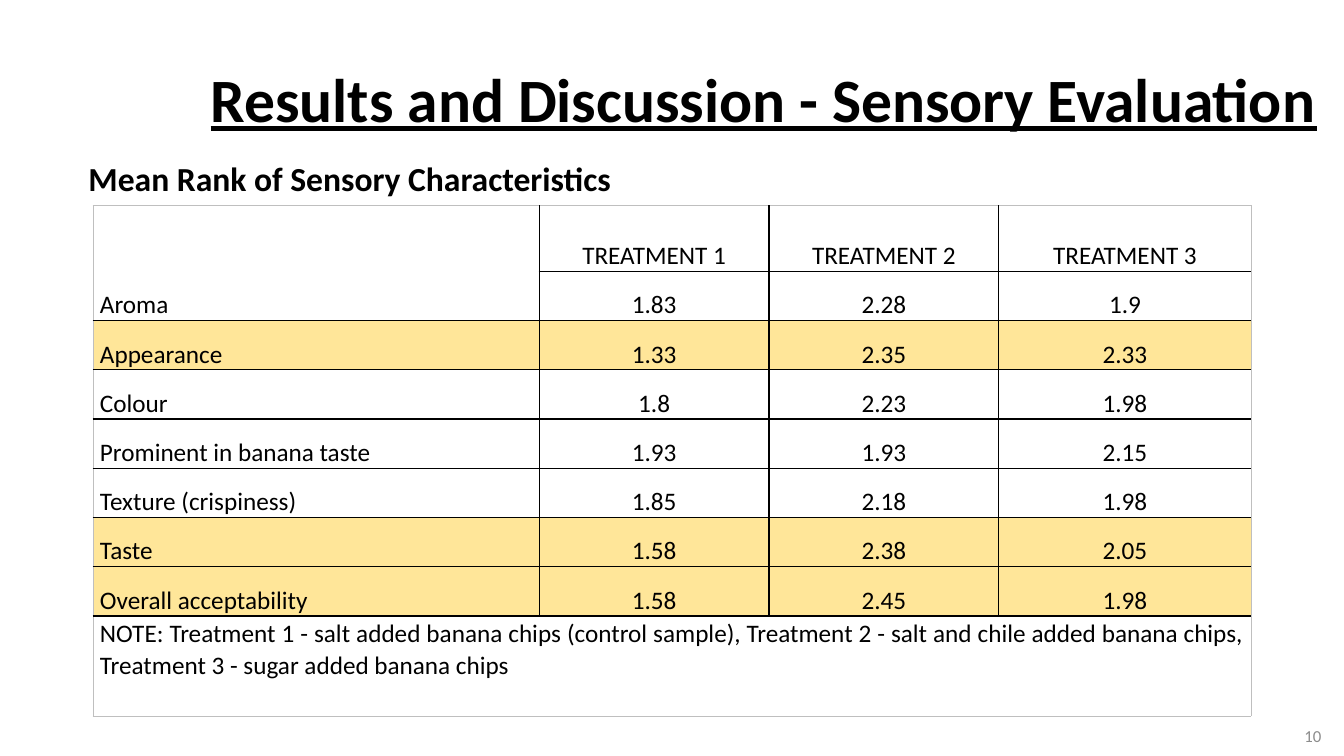
from dataclasses import dataclass
from typing import Optional

from lxml import etree
from pptx import Presentation
from pptx import util as u
from pptx.dml.color import RGBColor
from pptx.enum import shapes, text
from pptx.oxml import ns


@dataclass(frozen=True)
class Theme:
    font: str = "Calibri"
    ink: str = "000000"
    paper: str = "FFFFFF"
    highlight: str = "FFE699"
    frame: str = "BFBFBF"
    muted: str = "8C8C8C"
    title_size: int = 44
    heading_size: int = 24
    table_size: int = 18
    number_size: int = 12


@dataclass(frozen=True)
class Label:
    wording: str
    left: float
    top: float
    width: float
    height: float
    size: int
    color: str
    align: text.PP_ALIGN = text.PP_ALIGN.LEFT
    anchor: text.MSO_ANCHOR = text.MSO_ANCHOR.MIDDLE
    line_spacing: float = 1.0
    space_after: int = 0
    bold: bool = False
    underline: bool = False
    fill: Optional[str] = None


@dataclass(frozen=True)
class Rating:
    characteristic: str
    ranks: tuple[str, str, str]
    highlighted: bool = False


THEME = Theme()
LINE_SPACING = 1.07
TREATMENTS = ("TREATMENT 1", "TREATMENT 2", "TREATMENT 3")
RATINGS = (
    Rating("Aroma", ("1.83", "2.28", "1.9")),
    Rating("Appearance", ("1.33", "2.35", "2.33"), True),
    Rating("Colour", ("1.8", "2.23", "1.98")),
    Rating("Prominent in banana taste", ("1.93", "1.93", "2.15")),
    Rating("Texture (crispiness)", ("1.85", "2.18", "1.98")),
    Rating("Taste", ("1.58", "2.38", "2.05"), True),
    Rating("Overall acceptability", ("1.58", "2.45", "1.98"), True),
)
NOTE = ("NOTE: Treatment 1 - salt added banana chips (control sample), "
        "Treatment 2 - salt and chile added banana chips, "
        "Treatment 3 - sugar added banana chips")
COLUMN_WIDTHS = (11.25, 5.79, 5.79, 6.36)
ROW_HEIGHTS = (1.66, *[1.24] * len(RATINGS), 2.52)
NOTE_ROW = len(ROW_HEIGHTS) - 1
LAST_COLUMN = len(COLUMN_WIDTHS) - 1

PAGE_NUMBER = Label("10", 25.93, 18.03, 7.62, 1.02, THEME.number_size, THEME.muted,
                    align=text.PP_ALIGN.RIGHT)
HEADING = Label("Mean Rank of Sensory Characteristics", 1.98, 3.78, 14, 1.27,
                THEME.heading_size, THEME.ink, anchor=text.MSO_ANCHOR.TOP,
                line_spacing=LINE_SPACING, space_after=8, bold=True, fill=THEME.paper)
TITLE = Label("Results and Discussion - Sensory Evaluation", 4.65, 0.74, 29.21, 3.68,
              THEME.title_size, THEME.ink, align=text.PP_ALIGN.CENTER,
              line_spacing=0.9, bold=True, underline=True)


def add_run(paragraph, wording: str, size: int, color: str):
    run = paragraph.add_run()
    run.text = wording
    run.font.name = THEME.font
    run.font.size = u.Pt(size)
    run.font.color.rgb = RGBColor.from_string(color)
    return run


def add_label(slide, label: Label) -> None:
    area = [u.Cm(n) for n in (label.left, label.top, label.width, label.height)]
    if label.fill:
        box = slide.shapes.add_shape(shapes.MSO_SHAPE.RECTANGLE, *area)
        box.shadow.inherit = False
        box.fill.solid()
        box.fill.fore_color.rgb = RGBColor.from_string(label.fill)
        box.line.fill.background()
    else:
        box = slide.shapes.add_textbox(*area)
    frame = box.text_frame
    frame.word_wrap = True
    frame.vertical_anchor = label.anchor
    paragraph = frame.paragraphs[0]
    paragraph.alignment = label.align
    paragraph.line_spacing = label.line_spacing
    paragraph.space_after = u.Pt(label.space_after)
    run = add_run(paragraph, label.wording, label.size, label.color)
    run.font.bold = label.bold
    run.font.underline = label.underline


def set_borders(cell, row: int, column: int) -> None:
    """Rule the inner edges in ink and the table's outer edges in a thin grey."""
    outer_edges = {
        "lnL": column == 0 or row == NOTE_ROW,
        "lnR": column == LAST_COLUMN or row == NOTE_ROW,
        "lnT": row == 0,
        "lnB": row == NOTE_ROW,
    }
    properties = cell._tc.get_or_add_tcPr()
    for edge, outer in outer_edges.items():
        width = u.Pt(0.5 if outer else 1)
        line = etree.SubElement(properties, ns.qn(f"a:{edge}"), w=str(int(width)))
        fill = etree.SubElement(line, ns.qn("a:solidFill"))
        etree.SubElement(fill, ns.qn("a:srgbClr"), val=THEME.frame if outer else THEME.ink)


def write_cell(cell, wording: str, align: text.PP_ALIGN,
               anchor: text.MSO_ANCHOR = text.MSO_ANCHOR.BOTTOM) -> None:
    cell.vertical_anchor = anchor
    cell.margin_left = cell.margin_right = u.Cm(0.18)
    cell.margin_top = cell.margin_bottom = 0
    paragraph = cell.text_frame.paragraphs[0]
    paragraph.alignment = align
    paragraph.line_spacing = LINE_SPACING
    add_run(paragraph, wording, THEME.table_size, THEME.ink)


def add_rank_table(slide) -> None:
    table = slide.shapes.add_table(
        len(ROW_HEIGHTS), len(COLUMN_WIDTHS), u.Cm(2.34), u.Cm(5.18),
        u.Cm(sum(COLUMN_WIDTHS)), u.Cm(sum(ROW_HEIGHTS))).table
    table.first_row = table.horz_banding = False
    for column, width in zip(table.columns, COLUMN_WIDTHS):
        column.width = u.Cm(width)
    for row, height in zip(table.rows, ROW_HEIGHTS):
        row.height = u.Cm(height)

    highlighted_rows = {i for i, rating in enumerate(RATINGS, 1) if rating.highlighted}
    for row in range(len(ROW_HEIGHTS)):
        color = THEME.highlight if row in highlighted_rows else THEME.paper
        for column in range(len(COLUMN_WIDTHS)):
            cell = table.cell(row, column)
            set_borders(cell, row, column)
            cell.fill.solid()
            cell.fill.fore_color.rgb = RGBColor.from_string(color)

    table.cell(0, 0).merge(table.cell(1, 0))
    table.cell(NOTE_ROW, 0).merge(table.cell(NOTE_ROW, LAST_COLUMN))
    for row, values in enumerate((TREATMENTS, *(rating.ranks for rating in RATINGS))):
        for column, value in enumerate(values, 1):
            write_cell(table.cell(row, column), value, text.PP_ALIGN.CENTER)
    for row, rating in enumerate(RATINGS, 1):
        # The first characteristic sits in the cell merged with the header row.
        label_row = 0 if row == 1 else row
        write_cell(table.cell(label_row, 0), rating.characteristic, text.PP_ALIGN.LEFT)
    write_cell(table.cell(NOTE_ROW, 0), NOTE, text.PP_ALIGN.JUSTIFY, text.MSO_ANCHOR.TOP)


def main() -> None:
    deck = Presentation()
    deck.slide_width, deck.slide_height = u.Cm(33.87), u.Cm(19.05)
    slide = deck.slides.add_slide(deck.slide_layouts[6])
    add_label(slide, PAGE_NUMBER)
    add_label(slide, HEADING)
    add_rank_table(slide)
    add_label(slide, TITLE)
    deck.save("out.pptx")


if __name__ == "__main__":
    main()
